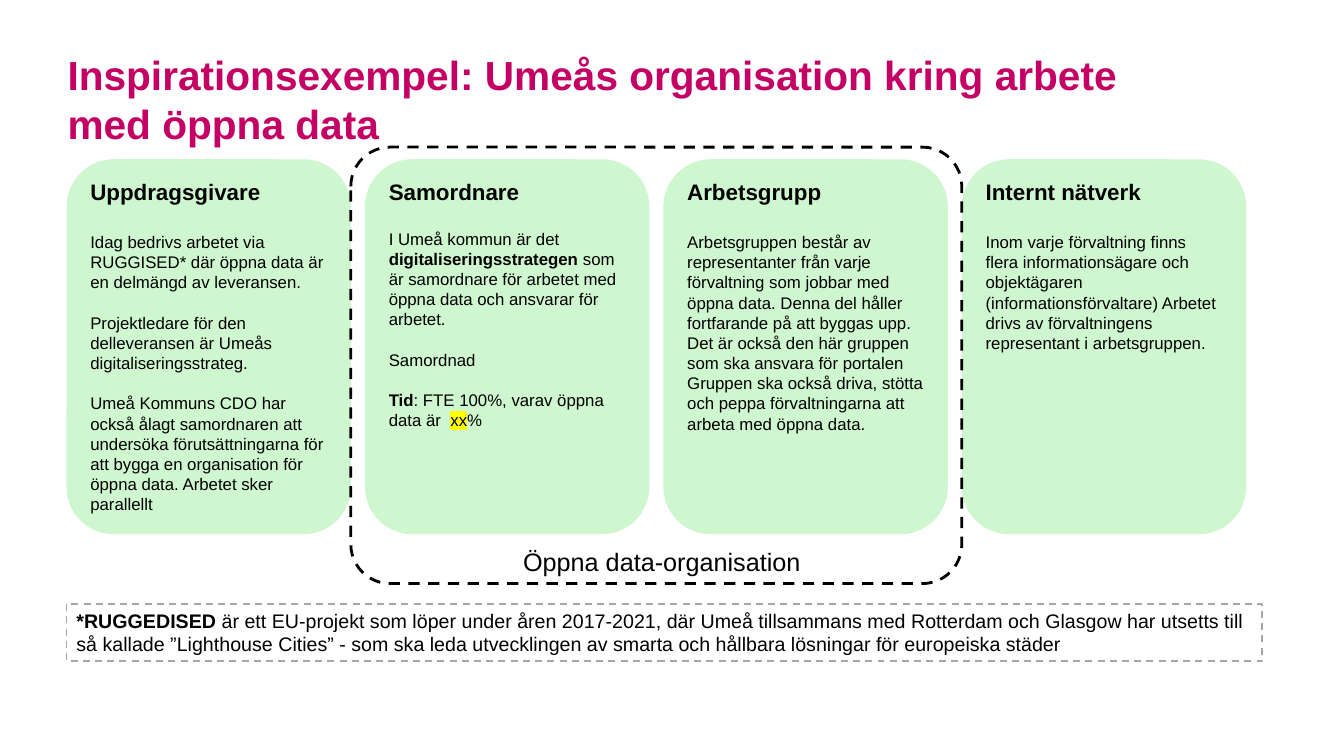
from dataclasses import dataclass

from lxml.etree import SubElement
from pptx import Presentation
from pptx.dml.color import RGBColor
from pptx.enum.dml import MSO_LINE
from pptx.enum.shapes import MSO_SHAPE
from pptx.enum.text import MSO_ANCHOR, MSO_AUTO_SIZE, PP_ALIGN
from pptx.oxml.ns import qn
from pptx.util import Inches, Pt


@dataclass(frozen=True)
class Theme:
    font: str = "Arial"
    accent: str = "C40064"
    ink: str = "000000"
    card: str = "CFF7CF"
    border: str = "A6A6A6"
    marker: str = "FFFF00"
    title_size: int = 29
    label_size: int = 18
    heading_size: int = 16
    note_size: int = 14
    body_size: int = 12
    line_height: float = 1.2


THEME = Theme()

# Each card: heading, size of the gap below it, paragraphs of (text, style) spans
CARDS = [
    ("Uppdragsgivare", 16, [
        [("Idag bedrivs arbetet via RUGGISED* där öppna data är en delmängd av leveransen.", "")],
        [("Projektledare för den delleveransen är Umeås digitaliseringsstrateg.", "")],
        [("Umeå Kommuns CDO har också ålagt samordnaren att undersöka förutsättningarna "
          "för att bygga en organisation för öppna data. Arbetet sker parallellt", "")],
    ]),
    ("Samordnare", 14, [
        [("I Umeå kommun är det ", ""), ("digitaliseringsstrategen", "bold"),
         (" som är samordnare för arbetet med öppna data och ansvarar för arbetet.", "")],
        [("Samordnad", "")],
        [("Tid", "bold"), (": FTE 100%, varav öppna data är  ", ""), ("xx", "marked"), ("%", "")],
    ]),
    ("Arbetsgrupp", 16, [
        [("Arbetsgruppen består av representanter från varje förvaltning som jobbar med "
          "öppna data. Denna del håller fortfarande på att byggas upp. Det är också den "
          "här gruppen som ska ansvara för portalen Gruppen ska också driva, stötta och "
          "peppa förvaltningarna att arbeta med öppna data.", "")],
    ]),
    ("Internt nätverk", 16, [
        [("Inom varje förvaltning finns flera informationsägare och objektägaren "
          "(informationsförvaltare) Arbetet drivs av förvaltningens representant i "
          "arbetsgruppen.", "")],
    ]),
]


def set_attributes(target, values):
    for name, value in values.items():
        setattr(target, name, value)


def add_spans(para, spans, size, color=THEME.ink):
    for text, style in spans:
        span = para.add_run()
        span.text = text
        set_attributes(span.font, {"name": THEME.font, "size": Pt(size), "bold": style == "bold"})
        span.font.color.rgb = RGBColor.from_string(color)
        if style == "marked":
            properties = span.font.fill._xPr
            highlight = SubElement(properties, qn("a:highlight"))
            SubElement(highlight, qn("a:srgbClr")).set("val", THEME.marker)
            properties.find(qn("a:solidFill")).addnext(highlight)


def add_panel(page, kind, box, fill=None, line=None, line_width=1):
    panel = page.shapes.add_shape(kind, *map(Inches, box))
    panel.shadow.inherit = False
    if fill:
        panel.fill.solid()
        panel.fill.fore_color.rgb = RGBColor.from_string(fill)
    else:
        panel.fill.background()
    if line:
        panel.line.color.rgb = RGBColor.from_string(line)
        set_attributes(panel.line, {"width": Pt(line_width), "dash_style": MSO_LINE.DASH})
    else:
        panel.line.fill.background()
    return panel


def add_title(page, box):
    title = page.shapes.title
    left, top, width, height = map(Inches, box)
    set_attributes(title, {"left": left, "top": top, "width": width, "height": height})
    frame = title.text_frame
    set_attributes(frame, {
        "margin_left": 0, "margin_top": 0, "margin_right": 0, "margin_bottom": 0,
        "vertical_anchor": MSO_ANCHOR.TOP, "word_wrap": True, "auto_size": MSO_AUTO_SIZE.NONE,
    })
    para = frame.paragraphs[0]
    para.alignment = PP_ALIGN.LEFT
    text = "Inspirationsexempel: Umeås organisation kring arbete med öppna data"
    add_spans(para, [(text, "bold")], THEME.title_size, THEME.accent)


def add_card(page, box, heading, heading_gap, paragraphs):
    card = add_panel(page, MSO_SHAPE.ROUNDED_RECTANGLE, box, fill=THEME.card)
    frame = card.text_frame
    set_attributes(frame, {"vertical_anchor": MSO_ANCHOR.TOP, "word_wrap": True})
    para = frame.paragraphs[0]
    para.alignment = PP_ALIGN.LEFT
    add_spans(para, [(heading, "bold")], THEME.heading_size)
    gap = heading_gap
    for spans in paragraphs:
        para = frame.add_paragraph()
        set_attributes(para, {"alignment": PP_ALIGN.LEFT,
                              "space_before": Pt(gap * THEME.line_height)})
        add_spans(para, spans, THEME.body_size)
        gap = THEME.body_size


def add_cards(page, box):
    left, top, width, height = box
    card_width = 2.82
    pitch = (width - card_width) / (len(CARDS) - 1)
    for index, card in enumerate(CARDS):
        add_card(page, (left + index * pitch, top, card_width, height), *card)


def add_note(page, box):
    note = add_panel(page, MSO_SHAPE.RECTANGLE, box, line=THEME.border, line_width=1.25)
    frame = note.text_frame
    set_attributes(frame, {"word_wrap": True, "vertical_anchor": MSO_ANCHOR.TOP,
                           "auto_size": MSO_AUTO_SIZE.SHAPE_TO_FIT_TEXT})
    para = frame.paragraphs[0]
    para.alignment = PP_ALIGN.LEFT
    add_spans(para, [
        ("*RUGGEDISED ", "bold"),
        ("är ett EU-projekt som löper under åren 2017-2021, där Umeå tillsammans med "
         "Rotterdam och Glasgow har utsetts till så kallade ”Lighthouse Cities” - som ska "
         "leda utvecklingen av smarta och hållbara lösningar för europeiska städer", ""),
    ], THEME.note_size)


def add_organisation_frame(page, box):
    left, top, width, height = box
    outline = add_panel(page, MSO_SHAPE.ROUNDED_RECTANGLE, box, line=THEME.ink, line_width=2)
    outline.adjustments[0] = 0.09
    # Label centred along the lower edge of the frame
    label_width, label_height = 2.98, 0.4
    label_box = (left + (width - label_width) / 2 + 0.07, top + height - 0.42,
                 label_width, label_height)
    label = page.shapes.add_textbox(*map(Inches, label_box))
    set_attributes(label.text_frame, {"word_wrap": False,
                                      "auto_size": MSO_AUTO_SIZE.SHAPE_TO_FIT_TEXT})
    add_spans(label.text_frame.paragraphs[0], [("Öppna data-organisation", "")], THEME.label_size)


def main():
    deck = Presentation()
    set_attributes(deck, {"slide_width": Inches(13.33), "slide_height": Inches(7.5)})
    page = deck.slides.add_slide(deck.slide_layouts[5])
    add_title(page, (0.67, 0.5, 10.65, 0.91))
    add_cards(page, (0.66, 1.58, 11.7, 3.72))
    add_note(page, (0.66, 5.99, 11.86, 0.57))
    add_organisation_frame(page, (3.48, 1.46, 6.06, 4.33))
    deck.save("out.pptx")


if __name__ == "__main__":
    main()
